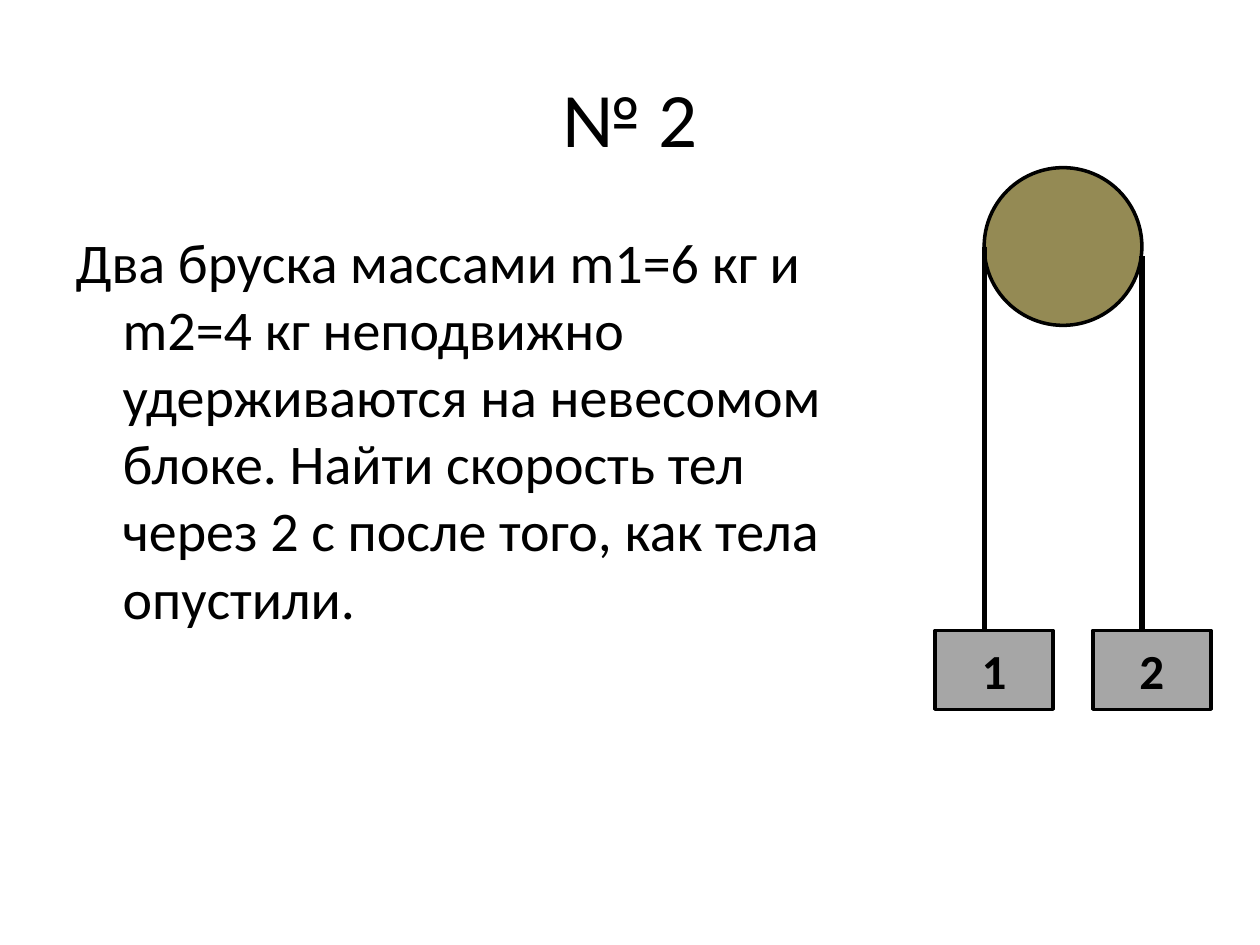
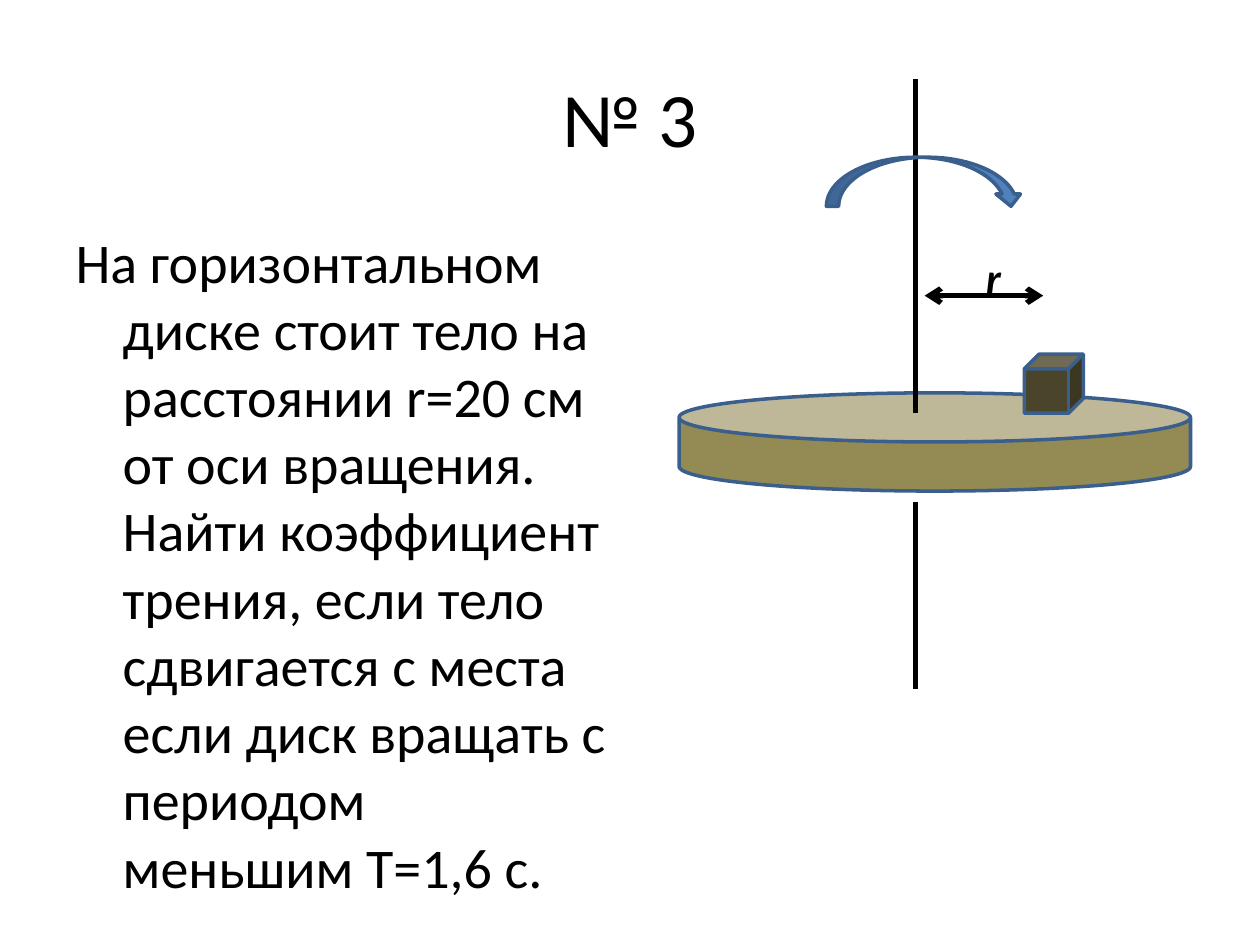
from lxml import etree
from pptx import Presentation
from pptx.dml.color import RGBColor
from pptx.enum.shapes import MSO_CONNECTOR, MSO_SHAPE
from pptx.enum.text import MSO_ANCHOR, MSO_AUTO_SIZE, PP_ALIGN
from pptx.oxml.ns import qn
from pptx.util import Cm, Pt

OVAL, RECTANGLE = MSO_SHAPE.OVAL, MSO_SHAPE.RECTANGLE
CAN, CUBE = MSO_SHAPE.CAN, MSO_SHAPE.CUBE
CURVED_ARROW = MSO_SHAPE.CURVED_DOWN_ARROW
STRAIGHT = MSO_CONNECTOR.STRAIGHT
MIDDLE, TOP = MSO_ANCHOR.MIDDLE, MSO_ANCHOR.TOP
CENTER, LEFT = PP_ALIGN.CENTER, PP_ALIGN.LEFT
NO_AUTOFIT, GROW = MSO_AUTO_SIZE.NONE, MSO_AUTO_SIZE.SHAPE_TO_FIT_TEXT

FONT = "Calibri"
BLACK = "000000"
OLIVE = "948A54"
DARK_OLIVE = "4A452A"
GRAY = "A6A6A6"
BLUE = "4F81BD"
DARK_BLUE = "3A5F8C"
TITLE_BOX = (1.27, 0.76, 22.86, 3.18)
HANGING = 0.95


def color(hex_string):
    return RGBColor.from_string(hex_string)


def format_text(shape, text, size, alignment=CENTER, anchor=MIDDLE, bold=False, italic=False):
    frame = shape.text_frame
    frame.text = text
    frame.vertical_anchor = anchor
    paragraph = frame.paragraphs[0]
    paragraph.alignment = alignment
    font = paragraph.font
    font.name, font.size = FONT, Pt(size)
    font.bold, font.italic = bold, italic
    font.color.rgb = color(BLACK)
    return paragraph


def fill_placeholder(shape, box, text, size, alignment, anchor):
    shape.left, shape.top, shape.width, shape.height = map(Cm, box)
    paragraph = format_text(shape, text, size, alignment, anchor)
    shape.text_frame.auto_size = NO_AUTOFIT
    return paragraph


def add_figure(slide, kind, left, top, width, height, fill, line):
    shape = slide.shapes.add_shape(kind, Cm(left), Cm(top), Cm(width), Cm(height))
    shape.shadow.inherit = False
    shape.fill.solid()
    shape.fill.fore_color.rgb = color(fill)
    shape.line.color.rgb = color(line)
    shape.line.width = Pt(2)
    return shape


def add_line(slide, start_x, start_y, end_x, end_y, arrows=False):
    connector = slide.shapes.add_connector(
        STRAIGHT, Cm(start_x), Cm(start_y), Cm(end_x), Cm(end_y))
    connector.line.color.rgb = color(BLACK)
    connector.line.width = Pt(3)
    properties = connector._element.spPr
    if arrows:
        for end in ("a:headEnd", "a:tailEnd"):
            etree.SubElement(properties.find(qn("a:ln")), qn(end), type="arrow")
    etree.SubElement(properties, qn("a:effectLst"))


def add_problem_slide(presentation, number, problem, body_width):
    slide = presentation.slides.add_slide(presentation.slide_layouts[1])
    title, body = slide.placeholders
    fill_placeholder(title, TITLE_BOX, f"№ {number}", 44, CENTER, MIDDLE)
    body_box = (1.27, 4.45, body_width, 12.57)
    paragraph = fill_placeholder(body, body_box, problem, 32, LEFT, TOP)
    properties = paragraph._p.get_or_add_pPr()
    properties.set("marL", str(Cm(HANGING)))
    properties.set("indent", str(Cm(-HANGING)))
    etree.SubElement(properties, qn("a:buNone")) if properties.find(qn("a:defRPr")) is None \
        else properties.find(qn("a:defRPr")).addprevious(etree.Element(qn("a:buNone")))
    return slide


def draw_pulley(slide, left, top, height):
    diameter, rope_length = 3.18, 7.75
    block_width, block_height = 2.38, 1.59
    wheel_left = left + 0.99
    add_figure(slide, OVAL, wheel_left, top, diameter, diameter, OLIVE, BLACK)
    for index, drop in enumerate((0, 0.2)):
        rope_x = wheel_left + index * diameter
        rope_top = top + diameter / 2 + drop
        add_line(slide, rope_x, rope_top, rope_x, rope_top + rope_length)
    for index in range(2):
        block = add_figure(slide, RECTANGLE, left + index * diameter,
                           top + height - block_height, block_width, block_height, GRAY, BLACK)
        format_text(block, str(index + 1), 28, bold=True)


def draw_turntable(slide, left, top, width):
    axis_x = left + 4.77
    radius_y = top + 4.36
    disc = add_figure(slide, CAN, left, top + 6.32, width, 1.98, OLIVE, DARK_BLUE)
    disc.adjustments[0] = 0.5
    for start, end in ((0, 6.73), (8.53, 12.29)):
        add_line(slide, axis_x, top + start, axis_x, top + end)
    add_figure(slide, CUBE, left + 6.96, top + 5.54, 1.19, 1.19, DARK_OLIVE, DARK_BLUE)
    add_line(slide, left + 4.95, radius_y, left + 7.34, radius_y, arrows=True)
    label = slide.shapes.add_textbox(Cm(left + 5.94), Cm(top + 3.35), Cm(0.81), Cm(1.27))
    format_text(label, "r", 24, LEFT, TOP, bold=True, italic=True)
    label.text_frame.word_wrap = False
    label.text_frame.auto_size = GROW
    add_figure(slide, CURVED_ARROW, left + 2.97, top + 1.57, 3.97, 0.99, BLUE, DARK_BLUE)


def main():
    presentation = Presentation()
    presentation.slide_width, presentation.slide_height = Cm(25.4), Cm(19.05)
    pulley_slide = add_problem_slide(
        presentation, 2,
        "Два бруска массами m1=6 кг и m2=4 кг неподвижно удерживаются на невесомом блоке. "
        "Найти скорость тел через 2 с после того, как тела опустили.", 15.8)
    draw_pulley(pulley_slide, 18.85, 3.38, 10.92)
    turntable_slide = add_problem_slide(
        presentation, 3,
        "На горизонтальном диске стоит тело на расстоянии r=20 см от оси вращения. "
        "Найти коэффициент трения, если тело сдвигается с места если диск вращать "
        "с периодом меньшим T=1,6 с.", 11.23)
    draw_turntable(turntable_slide, 13.69, 1.6, 10.31)
    presentation.save("out.pptx")


if __name__ == "__main__":
    main()
